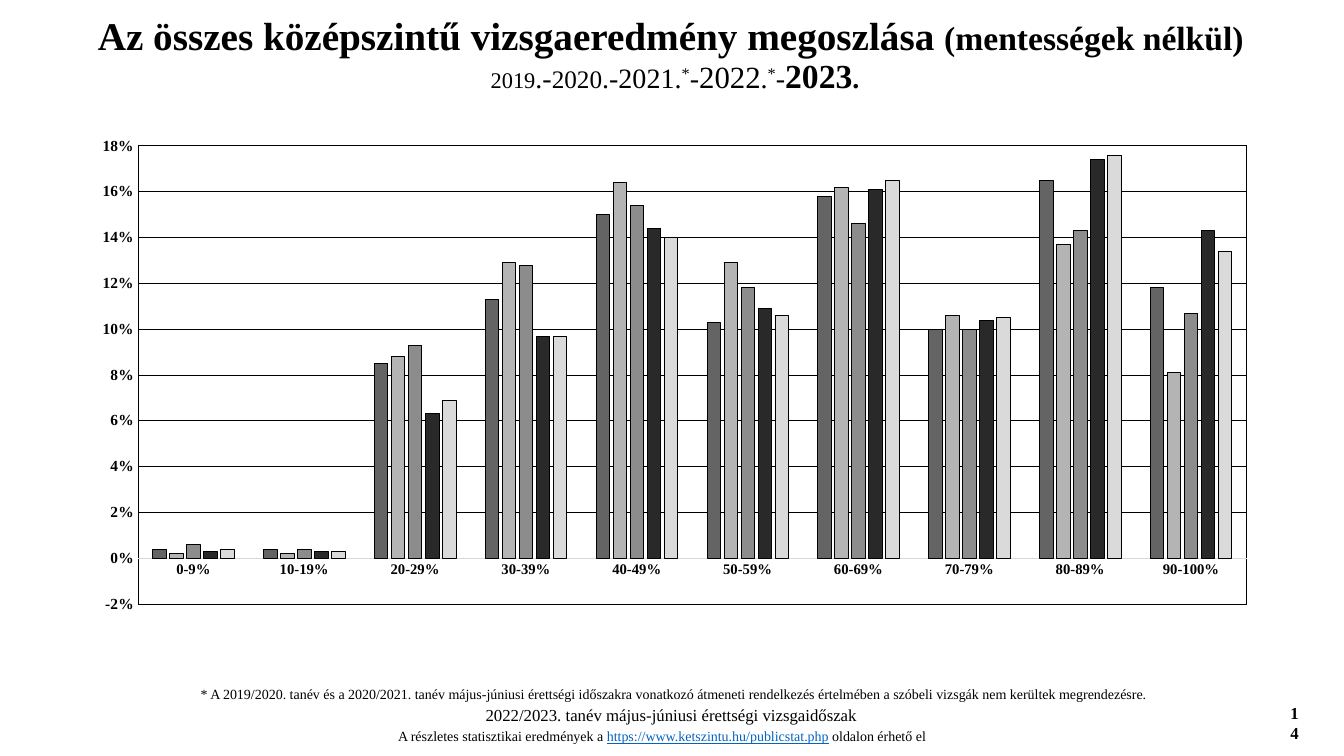
"""Build the slide on the distribution of intermediate-level exam results."""
from lxml import etree
from pptx import Presentation
from pptx.chart.data import CategoryChartData
from pptx.dml.color import RGBColor
from pptx.enum.chart import XL_CHART_TYPE, XL_TICK_MARK
from pptx.enum.text import MSO_ANCHOR, MSO_AUTO_SIZE, PP_ALIGN
from pptx.oxml.ns import qn
from pptx.util import Inches, Pt

COLUMNS = XL_CHART_TYPE.COLUMN_CLUSTERED
NO_TICK = XL_TICK_MARK.NONE
MIDDLE = MSO_ANCHOR.MIDDLE
NO_FIT = MSO_AUTO_SIZE.NONE
LEFT, CENTER = PP_ALIGN.LEFT, PP_ALIGN.CENTER

THEME = {
    "font": "Times New Roman",
    "text": RGBColor.from_string("000000"),
    "paper": RGBColor.from_string("FFFFFF"),
    "axis": RGBColor.from_string("D9D9D9"),
    "link": RGBColor.from_string("0563C1"),
    "bars": [RGBColor.from_string(tone) for tone in
             ("646464", "B4B4B4", "8C8C8C", "292929", "DADADA")],
    "note": 10, "category": 10.5, "value": 11, "footer": 12,
    "heading": 28, "large": 24, "medium": 22, "normal": 20, "small": 18, "tiny": 16,
    "hairline": 0.5, "axis_line": 0.75,
}
MARGIN, CONTENT = 0.79, 11.81


def style_font(font, size, **values):
    """Apply the theme font, a size and any further values."""
    font.color.rgb = values.pop("color", THEME["text"])
    for name, value in {"name": THEME["font"], "size": Pt(size), **values}.items():
        setattr(font, name, value)


def add_span(para, text, size, raised=False, **values):
    """Append one formatted run to a paragraph."""
    span = para.add_run()
    span.text = text
    style_font(span.font, size, **values)
    if raised:
        span._r.get_or_add_rPr().set("baseline", "30000")


deck = Presentation()
deck.slide_width, deck.slide_height = Inches(13.33), Inches(7.5)
page = deck.slides.add_slide(deck.slide_layouts[5])

title = page.shapes.title
title_place = {"left": MARGIN, "top": 0.2, "width": CONTENT, "height": 0.71}
for name, value in title_place.items():
    setattr(title, name, Inches(value))
frame_format = {"word_wrap": True, "auto_size": NO_FIT, "vertical_anchor": MIDDLE}
for name, value in frame_format.items():
    setattr(title.text_frame, name, value)
para = title.text_frame.paragraphs[0]
para.alignment, para.line_spacing = CENTER, 0.9
add_span(para, "Az összes középszintű vizsgaeredmény megoszlása ", THEME["heading"], bold=True)
add_span(para, "(mentességek nélkül) ", THEME["large"], bold=True)
para.add_line_break()
year_spans = [
    ("2019", "tiny", False, False), (".-", "normal", False, False),
    ("2020", "small", False, False), (".-2021.", "normal", False, False),
    ("*", "normal", True, False), ("-", "normal", False, False),
    ("2022", "medium", False, False), (".", "normal", False, False),
    ("*", "normal", True, False), ("-", "normal", False, False),
    ("2023", "large", False, True), (".", "normal", False, True),
]
for text, size, raised, bold in year_spans:
    add_span(para, text, THEME[size], raised, bold=bold)

results = [
    (0.004, 0.004, 0.085, 0.113, 0.15, 0.103, 0.158, 0.1, 0.165, 0.118),
    (0.002, 0.002, 0.088, 0.129, 0.164, 0.129, 0.162, 0.106, 0.137, 0.081),
    (0.006, 0.004, 0.093, 0.128, 0.154, 0.118, 0.146, 0.1, 0.143, 0.107),
    (0.003, 0.003, 0.063, 0.097, 0.144, 0.109, 0.161, 0.104, 0.174, 0.143),
    (0.004, 0.003, 0.069, 0.097, 0.14, 0.106, 0.165, 0.105, 0.176, 0.134),
]
data = CategoryChartData(number_format="0%")
data.categories = [f"{low}-{low + 9 if low < 90 else 100}%" for low in range(0, 100, 10)]
for number, shares in enumerate(results, 1):
    data.add_series(f"Series {number}", shares)
chart = page.shapes.add_chart(COLUMNS, Inches(MARGIN), Inches(1.26),
                              Inches(CONTENT), Inches(4.92), data).chart
chart.has_legend = chart.has_title = False
style_font(chart.font, THEME["note"], bold=True)

plot = chart.plots[0]
for name, value in {"gap_width": 219, "overlap": -27, "vary_by_categories": False}.items():
    setattr(plot, name, value)
for series, tone in zip(plot.series, THEME["bars"]):
    series.invert_if_negative = False
    series.format.fill.solid()
    series.format.fill.fore_color.rgb = tone
    series.format.line.color.rgb = THEME["text"]
    series.format.line.width = Pt(THEME["hairline"])

category_axis, value_axis = chart.category_axis, chart.value_axis
for axis, size in ((category_axis, "category"), (value_axis, "value")):
    axis.major_tick_mark = axis.minor_tick_mark = NO_TICK
    style_font(axis.tick_labels.font, THEME[size], bold=True)
category_axis.format.line.color.rgb = THEME["axis"]
category_axis.format.line.width = Pt(THEME["axis_line"])
value_format = {"minimum_scale": -0.02, "maximum_scale": 0.18, "major_unit": 0.02,
                "has_major_gridlines": True}
for name, value in value_format.items():
    setattr(value_axis, name, value)
value_axis.tick_labels.number_format = "0%"
value_axis.tick_labels.number_format_is_linked = False
value_axis.format.line.fill.background()
grid_line = value_axis.major_gridlines.format.line
grid_line.color.rgb = THEME["text"]
grid_line.width = Pt(THEME["hairline"])

plot_area = chart._chartSpace.chart.plotArea
for old_layout in plot_area.findall(qn("c:layout")):
    plot_area.remove(old_layout)
layout = etree.Element(qn("c:layout"))
manual = etree.SubElement(layout, qn("c:manualLayout"))
layout_values = {"layoutTarget": "inner", "xMode": "edge", "yMode": "edge",
                 "x": 0.049, "y": 0.038, "w": 0.931, "h": 0.924}
for name, value in layout_values.items():
    etree.SubElement(manual, qn(f"c:{name}")).set("val", str(value))
plot_area.insert(0, layout)
frame = etree.SubElement(plot_area, qn("c:spPr"))
outline = etree.Element(qn("a:ln"), w=str(Pt(THEME["hairline"])))
for parent, tone in ((frame, THEME["paper"]), (outline, THEME["text"])):
    fill = etree.SubElement(parent, qn("a:solidFill"))
    etree.SubElement(fill, qn("a:srgbClr")).set("val", str(tone))
frame.append(outline)

note = ("* A 2019/2020. tanév és a 2020/2021. tanév május-júniusi érettségi időszakra vonatkozó "
        "átmeneti rendelkezés értelmében a szóbeli vizsgák nem kerültek megrendezésre. ")
captions = [
    ((12.7, 6.92, 0.29, 0.3), LEFT, "footer", [("14", {"bold": True})]),
    ((3.59, 6.94, 6.14, 0.3), CENTER, "footer",
     [("2022/2023. tanév május-júniusi érettségi vizsgaidőszak", {})]),
    ((3.85, 7.17, 5.63, 0.27), LEFT, "note",
     [("A részletes statisztikai eredmények a ", {}),
      ("https://www.ketszintu.hu/publicstat.php", {"color": THEME["link"], "underline": True}),
      (" oldalon érhető el", {})]),
    ((MARGIN, 6.75, CONTENT, 0.27), CENTER, "note", [(note, {})]),
]
for place, alignment, size, spans in captions:
    box = page.shapes.add_textbox(*map(Inches, place))
    box.text_frame.word_wrap = True
    para = box.text_frame.paragraphs[0]
    para.alignment = alignment
    for text, values in spans:
        add_span(para, text, THEME[size], **values)

deck.save("out.pptx")
